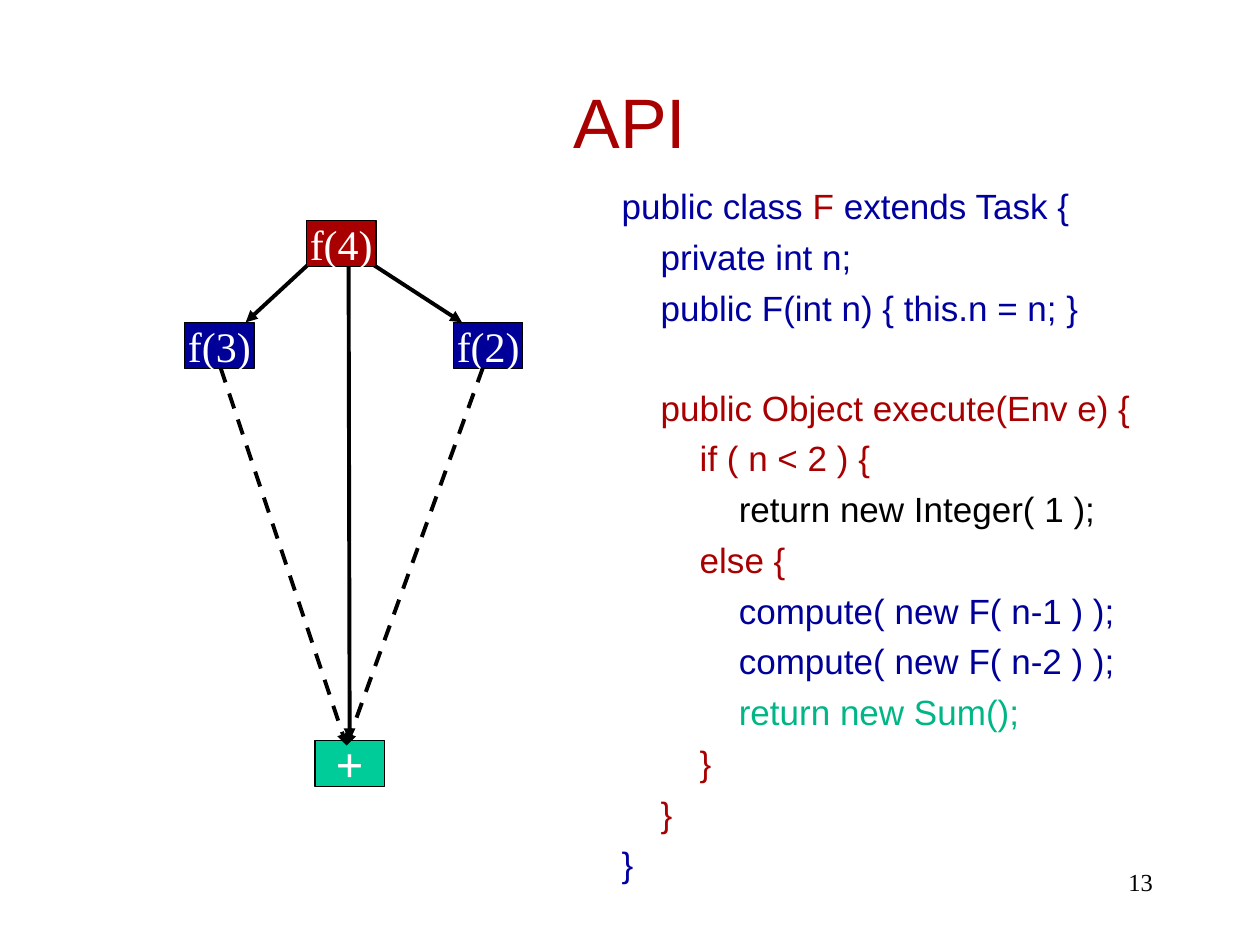
from lxml import etree
from pptx import Presentation
from pptx.dml.color import RGBColor
from pptx.enum.dml import MSO_LINE
from pptx.enum.shapes import MSO_CONNECTOR, MSO_SHAPE
from pptx.enum.text import MSO_ANCHOR, MSO_AUTO_SIZE, PP_ALIGN
from pptx.oxml.ns import qn
from pptx.util import Inches, Pt

RECT, LINE = MSO_SHAPE.RECTANGLE, MSO_CONNECTOR.STRAIGHT
DASH, SOLID = MSO_LINE.DASH, MSO_LINE.SOLID
TOP, MID = MSO_ANCHOR.TOP, MSO_ANCHOR.MIDDLE
LEFT, MIDST, RIGHT = PP_ALIGN.LEFT, PP_ALIGN.CENTER, PP_ALIGN.RIGHT
FIXED = MSO_AUTO_SIZE.NONE

THEME = {
    "red": "A80000", "navy": "00009F", "blue": "000099", "mint": "00CC99",
    "green": "00B686", "black": "000000", "white": "FFFFFF",
    "sans": "Arial", "serif": "Times New Roman",
    "head": 40, "code": 20, "node": 24, "sign": 28, "page": 14,
    "edge": 0.75, "arrow": 2.25, "gap": 5, "skip": 33,
}

TITLE = "API"
PAGE = "13"
CODE = [
    (0, "gap", [("public class ", "navy"), ("F", "red"), (" extends Task {", "navy")]),
    (1, "gap", [("private int n;", "navy")]),
    (1, "gap", [("public F(int n) { this.n = n; }", "navy")]),
    (1, "skip", [("public Object execute(Env e) {", "red")]),
    (2, "gap", [("if ( n < 2 ) {", "red")]),
    (3, "gap", [("return new Integer( 1 );", "black")]),
    (2, "gap", [("else {", "red")]),
    (3, "gap", [("compute( new F( n-1 ) );", "blue")]),
    (3, "gap", [("compute( new F( n-2 ) );", "blue")]),
    (3, "gap", [("return new Sum();", "green")]),
    (2, "gap", [("}", "red")]),
    (1, "gap", [("}", "red")]),
    (0, "gap", [("}", "navy")]),
]

COLS = 120
WIDE, HIGH = Inches(10), Inches(7.5)
UNIT = WIDE / COLS
AREA = {"title": (9, 4, 102, 15), "code": (58, 17, 59, 64), "page": (86, 82, 25, 6)}
NODE = (6.6, 4.4)
STEP = Inches(0.31)

NODES = [
    ("f(3)", 17.6, 30.7, "blue", "node", False),
    ("f(2)", 43.2, 30.7, "blue", "node", False),
    ("+", 30, 70.5, "mint", "sign", True),
]
CALLS = [
    (33.2, 24.6, 33.3, 70.5),
    (30, 24.6, 23.4, 30.7),
    (34.6, 24.6, 44, 30.7),
]
ROOT = ("f(4)", 29.2, 21, "red", "node", False)
JOINS = [(21, 35, 33, 71), (46, 35, 33, 71)]


def grid(*cells):
    return [round(c * UNIT) for c in cells]


def tint(name):
    return RGBColor.from_string(THEME[name])


def apply(item, form):
    for key, val in form.items():
        setattr(item, key, val)


def place(shape, area):
    apply(shape, dict(zip(("left", "top", "width", "height"), grid(*area))))


def write(para, text, color, face, size, bold=False):
    run = para.add_run()
    run.text = text
    apply(run.font, {"name": THEME[face], "size": Pt(THEME[size]), "bold": bold})
    run.font.color.rgb = tint(color)


def label(shape, text, color, face, size, align, anchor):
    place(shape, AREA[size if size == "page" else "title"])
    apply(shape.text_frame, {"word_wrap": True, "auto_size": FIXED,
                             "vertical_anchor": anchor})
    para = shape.text_frame.paragraphs[0]
    para.alignment = align
    write(para, text, color, face, size)


def listing(shape):
    place(shape, AREA["code"])
    frame = shape.text_frame
    apply(frame, {"word_wrap": True, "auto_size": FIXED, "vertical_anchor": TOP})
    for i, (depth, gap, runs) in enumerate(CODE):
        para = frame.add_paragraph() if i else frame.paragraphs[0]
        apply(para, {"alignment": LEFT, "space_before": Pt(THEME[gap])})
        props = para._p.get_or_add_pPr()
        props.set("marL", str(depth * STEP))
        props.set("indent", "0")
        etree.SubElement(props, qn("a:buNone"))
        for text, color in runs:
            write(para, text, color, "sans", "code")


def node(slide, text, x, y, color, size, bold):
    box = slide.shapes.add_shape(RECT, *grid(x, y, *NODE))
    box.shadow.inherit = False
    box.fill.solid()
    box.fill.fore_color.rgb = tint(color)
    box.line.color.rgb = tint("black")
    box.line.width = Pt(THEME["edge"])
    sides = ("left", "right", "top", "bottom")
    apply(box.text_frame, {f"margin_{s}": 0 for s in sides})
    apply(box.text_frame, {"word_wrap": False, "vertical_anchor": MID})
    para = box.text_frame.paragraphs[0]
    para.alignment = MIDST
    write(para, text, "white", "serif", size, bold)


def arrow(slide, ends, dash):
    link = slide.shapes.add_connector(LINE, *grid(*ends))
    link.line.color.rgb = tint("black")
    apply(link.line, {"width": Pt(THEME["arrow"]), "dash_style": dash})
    tip = etree.SubElement(link.line._get_or_add_ln(), qn("a:tailEnd"))
    tip.set("type", "triangle")
    etree.SubElement(link._element.spPr, qn("a:effectLst"))


def main():
    deck = Presentation()
    apply(deck, {"slide_width": WIDE, "slide_height": HIGH})
    slide = deck.slides.add_slide(deck.slide_layouts[1])
    label(slide.shapes.title, TITLE, "red", "sans", "head", MIDST, MID)
    listing(slide.placeholders[1])
    page = slide.shapes.add_textbox(*grid(*AREA["page"]))
    label(page, PAGE, "black", "serif", "page", RIGHT, TOP)
    for item in NODES:
        node(slide, *item)
    for ends in CALLS:
        arrow(slide, ends, SOLID)
    node(slide, *ROOT)
    for ends in JOINS:
        arrow(slide, ends, DASH)
    deck.save("out.pptx")


if __name__ == "__main__":
    main()
